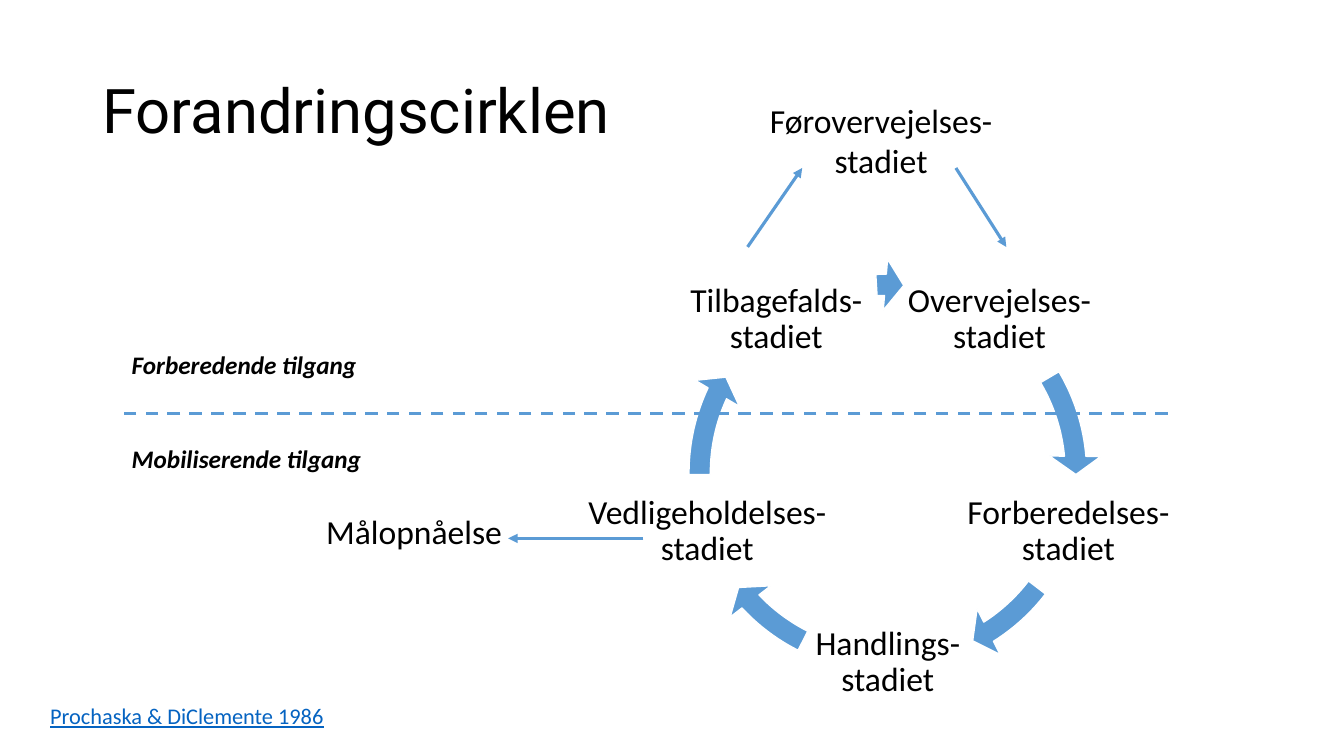
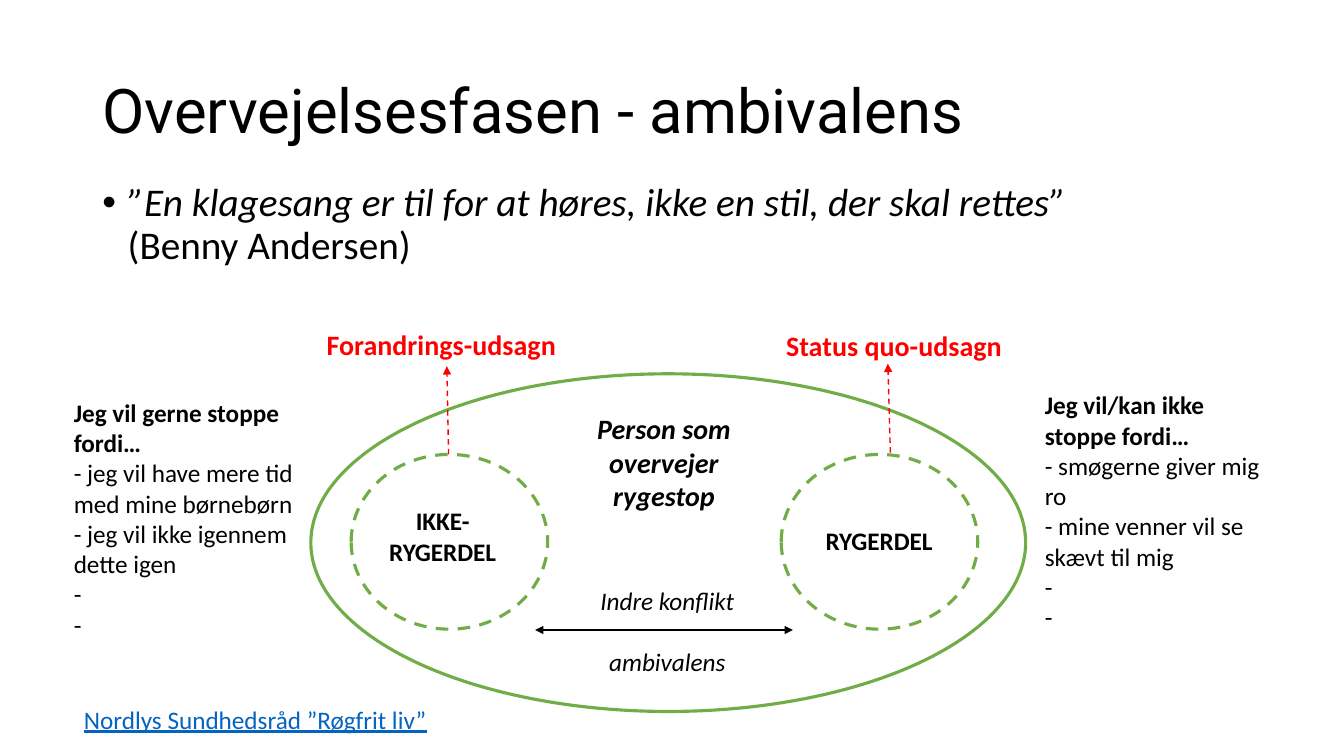
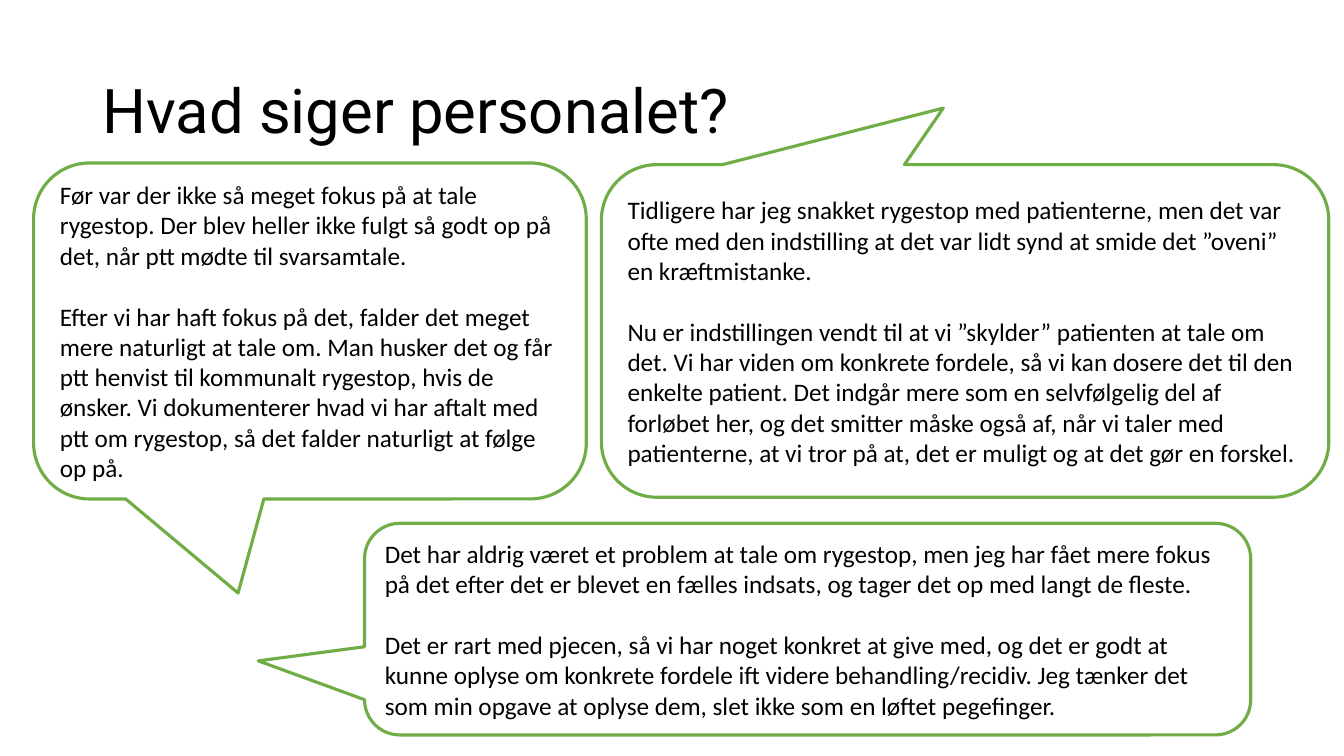
import math
from pptx import Presentation
from pptx import util as u
from pptx.dml import color
from pptx.enum import dml, shapes, text
from lxml import etree

# Shared look: a grid of 160 columns by 90 rows, twelve cells to the inch
COLS, ROWS = 160, 90
BLUE, GREEN, RED, BLACK, LINK = "5B9BD5", "70AD47", "FF0000", "000000", "0563C1"
LEFT, MID = text.PP_ALIGN.LEFT, text.PP_ALIGN.CENTER
NS = "{http://schemas.openxmlformats.org/drawingml/2006/main}"
hue = color.RGBColor.from_string


def grid(*cells):
    return [u.Emu(int(u.Inches(n / 12))) for n in cells]


def note(box, *lines, size=18, font="Calibri", tint=BLACK, bold=False,
         ital=False, under=False, align=LEFT, lead=1, gap=0):
    frame = box.text_frame
    frame.word_wrap = True
    frame.auto_size = text.MSO_AUTO_SIZE.NONE
    for i, line in enumerate(lines):
        para = frame.add_paragraph() if i else frame.paragraphs[0]
        para.text = line
        para.alignment = align
        para.line_spacing = lead
        para.space_before = u.Pt(gap if i else 0)
        for run in para.runs:
            run.font.name, run.font.size = font, u.Pt(size)
            run.font.bold, run.font.italic = bold, ital
            run.font.underline = under
            run.font.color.rgb = hue(tint)
    return frame


deck = Presentation()
deck.slide_width, deck.slide_height = grid(COLS, ROWS)

# Slides and titles
pages = []
for name, kind in (("Forandringscirklen", 5),
                   ("Overvejelsesfasen - ambivalens", 1),
                   ("Hvad siger personalet?", 5)):
    page = deck.slides.add_slide(deck.slide_layouts[kind])
    head = page.shapes.title
    head.left, head.top, head.width, head.height = grid(11, 4.8, 138, 17.4)
    note(head, name, size=44, font="Roboto", lead=0.9)
    pages.append(page)
wheel, doubt, staff = pages

# Wheel: five stages on a circle, each with the arrow that leaves it
midx, midy, reach, ring, tall = 105.7, 56.3, 22.6, 50.9, 13.6
stages = (("Overvejelses-stadiet", 22.7, 329.41, 354.92),
          ("Forberedelses-stadiet", 27.7, 37.53, 57.59),
          ("Handlings-stadiet", 20.4, 116.82, 136.89),
          ("Vedligeholdelses-stadiet", 31.1, 179.49, 205),
          ("Tilbagefalds-stadiet", 23.9, 266.54, 269.27))
for i, (name, wide, start, stop) in enumerate(stages):
    turn = math.radians(72 * i - 54)
    x, y = midx + reach * math.cos(turn), midy + reach * math.sin(turn)
    box = wheel.shapes.add_textbox(*grid(x - wide / 2, y - tall / 2, wide, tall))
    frame = note(box, name, size=24, align=MID, lead=0.9)
    frame.vertical_anchor = text.MSO_ANCHOR.MIDDLE
    frame.margin_left = frame.margin_right = u.Inches(0.03)
    frame.margin_top = frame.margin_bottom = u.Inches(0.03)
    arc = wheel.shapes.add_shape(
        shapes.MSO_SHAPE.CIRCULAR_ARROW,
        *grid(midx - ring / 2, midy - ring / 2, ring, ring))
    # Angles are kept in degrees; one degree is 0.6 of an adjustment
    for k, part in enumerate((0.05, 5.59 * 0.6, stop * 0.6, start * 0.6, 0.06)):
        arc.adjustments[k] = part
    arc.shadow.inherit = False
    arc.fill.solid()
    arc.fill.fore_color.rgb = hue(BLUE)
    arc.line.color.rgb = hue("FFFFFF")
    arc.line.width = u.Pt(1)

# Doubt: quotation in the body placeholder
body = doubt.placeholders[1]
body.left, body.top, body.width, body.height = grid(11, 21.2, 138, 13.9)
quote = note(body, "”En klagesang er til for at høres, ikke en stil, der skal "
             "rettes”\v(Benny Andersen)", size=28, ital=True, lead=0.9).paragraphs[0]
quote.space_before = u.Pt(10)
quote.runs[1].font.italic = False
trim = quote._p.get_or_add_pPr()
trim.set("marL", str(u.Inches(0.25)))
trim.set("indent", str(-u.Inches(0.25)))

# Doubt: the person and the two parts inside
for spot, dash in (((37, 44.5, 85.1, 40.2), False),
                   ((41.8, 54.1, 23.4, 20.8), True),
                   ((93, 54.1, 23.4, 20.8), True)):
    oval = doubt.shapes.add_shape(shapes.MSO_SHAPE.OVAL, *grid(*spot))
    oval.shadow.inherit = False
    oval.fill.background()
    oval.line.color.rgb = hue(GREEN)
    oval.line.width = u.Pt(2.25)
    if dash:
        oval.line.dash_style = dml.MSO_LINE.DASH

# Free labels
big = dict(size=24, align=MID)
slant = dict(bold=True, ital=True)
alarm = dict(size=20, bold=True, tint=RED)
cite = dict(tint=LINK, under=True)
for page, spot, lines, look in (
        (wheel, (85.7, 11.3, 38.4, 10.9), ["Førovervejelses-", "stadiet"], big),
        (wheel, (30.1, 60.2, 38.4, 6), ["Målopnåelse"], big),
        (wheel, (14.5, 41, 34.9, 4.9), ["Forberedende tilgang"], slant),
        (wheel, (14.5, 52.2, 34.9, 4.9), ["Mobiliserende tilgang"], slant),
        (wheel, (4.8, 83, 94.4, 4.4), ["Prochaska & DiClemente 1986"],
         dict(cite, size=16)),
        (doubt, (97.1, 62, 15.2, 4.8), ["RYGERDEL"], dict(bold=True)),
        (doubt, (45.1, 59.6, 15.2, 8.5), ["IKKE-RYGERDEL"],
         dict(bold=True, align=MID)),
        (doubt, (68.5, 48.4, 21.1, 13.3), ["Person som overvejer rygestop"],
         dict(slant, size=20, align=MID)),
        (doubt, (68.9, 69.1, 21.1, 12.1), ["Indre konflikt", "ambivalens"],
         dict(ital=True, align=MID, gap=22)),
        (doubt, (8.8, 83.2, 78.6, 4.8), ["Nordlys Sundhedsråd ”Røgfrit liv”"], cite),
        (doubt, (92.4, 38.5, 29.6, 5.3), ["Status quo-udsagn"], alarm),
        (doubt, (37.7, 38.4, 31.1, 5.3), ["Forandrings-udsagn"], alarm)):
    note(page.shapes.add_textbox(*grid(*spot)), *lines, **look)

# Doubt: reasons on both sides, the first line bold
for x, y, lines in (
        (7.6, 46.7, ("Jeg vil gerne stoppe fordi…",
                     "- jeg vil have mere tid med mine børnebørn",
                     "- jeg vil ikke igennem dette igen", "-", "-")),
        (123.2, 45.8, ("Jeg vil/kan ikke stoppe fordi…",
                       "- smøgerne giver mig ro",
                       "- mine venner vil se skævt til mig", "-", "-"))):
    frame = note(doubt.shapes.add_textbox(*grid(x, y, 30.1, 30.2)), *lines)
    frame.paragraphs[0].runs[0].font.bold = True

# Staff: speech bubbles, each with the place of its tip
for spot, tip, lines in (
        ((71.6, 19.6, 86.6, 39.6), (-0.03, -0.67), (
            "Tidligere har jeg snakket rygestop med patienterne, men det var ofte "
            "med den indstilling at det var lidt synd at smide det ”oveni” en "
            "kræftmistanke.",
            "Nu er indstillingen vendt til at vi ”skylder” patienten at tale om "
            "det. Vi har viden om konkrete fordele, så vi kan dosere det til den "
            "enkelte patient. Det indgår mere som en selvfølgelig del af forløbet "
            "her, og det smitter måske også af, når vi taler med patienterne, at "
            "vi tror på at, det er muligt og at det gør en forskel.")),
        ((4, 19.4, 65.8, 40), (-0.13, 0.78), (
            "Før var der ikke så meget fokus på at tale rygestop. Der blev heller "
            "ikke fulgt så godt op på det, når ptt mødte til svarsamtale.",
            "Efter vi har haft fokus på det, falder det meget mere naturligt at "
            "tale om. Man husker det og får ptt henvist til kommunalt rygestop, "
            "hvis de ønsker. Vi dokumenterer hvad vi har aftalt med ptt om "
            "rygestop, så det falder naturligt at følge op på.")),
        ((43.4, 62.3, 105.5, 25.2), (-0.62, 0.15), (
            "Det har aldrig været et problem at tale om rygestop, men jeg har "
            "fået mere fokus på det efter det er blevet en fælles indsats, og "
            "tager det op med langt de fleste.",
            "Det er rart med pjecen, så vi har noget konkret at give med, og det "
            "er godt at kunne oplyse om konkrete fordele ift videre "
            "behandling/recidiv. Jeg tænker det som min opgave at oplyse dem, "
            "slet ikke som en løftet pegefinger."))):
    talk = staff.shapes.add_shape(
        shapes.MSO_SHAPE.ROUNDED_RECTANGULAR_CALLOUT, *grid(*spot))
    talk.adjustments[0], talk.adjustments[1] = tip
    talk.shadow.inherit = False
    talk.fill.background()
    talk.line.color.rgb = hue(GREEN)
    talk.line.width = u.Pt(2.25)
    note(talk, *lines, gap=22)

# Lines and arrows
for page, ends, tint, width, dash, tips in (
        (wheel, (89, 29.4, 95.5, 20), BLUE, 2.25, False, ["tailEnd"]),
        (wheel, (113.8, 20, 119.8, 29.4), BLUE, 2.25, False, ["tailEnd"]),
        (wheel, (76.6, 64.1, 60.5, 64.1), BLUE, 2.25, False, ["tailEnd"]),
        (wheel, (139, 49.2, 14.5, 49.2), BLUE, 2.25, True, []),
        (doubt, (63.7, 75, 94.4, 75), BLACK, 1, False, ["headEnd", "tailEnd"]),
        (doubt, (53.4, 54.1, 53.2, 43.6), RED, 1, True, ["tailEnd"]),
        (doubt, (106, 53.9, 105.7, 43.3), RED, 1, True, ["tailEnd"])):
    wire = page.shapes.add_connector(shapes.MSO_CONNECTOR.STRAIGHT, *grid(*ends))
    wire.line.color.rgb = hue(tint)
    wire.line.width = u.Pt(width)
    if dash:
        wire.line.dash_style = dml.MSO_LINE.DASH
    for tip in tips:
        etree.SubElement(wire.line._get_or_add_ln(), NS + tip, type="triangle")
    etree.SubElement(wire._element.spPr, NS + "effectLst")

deck.save("out.pptx")
